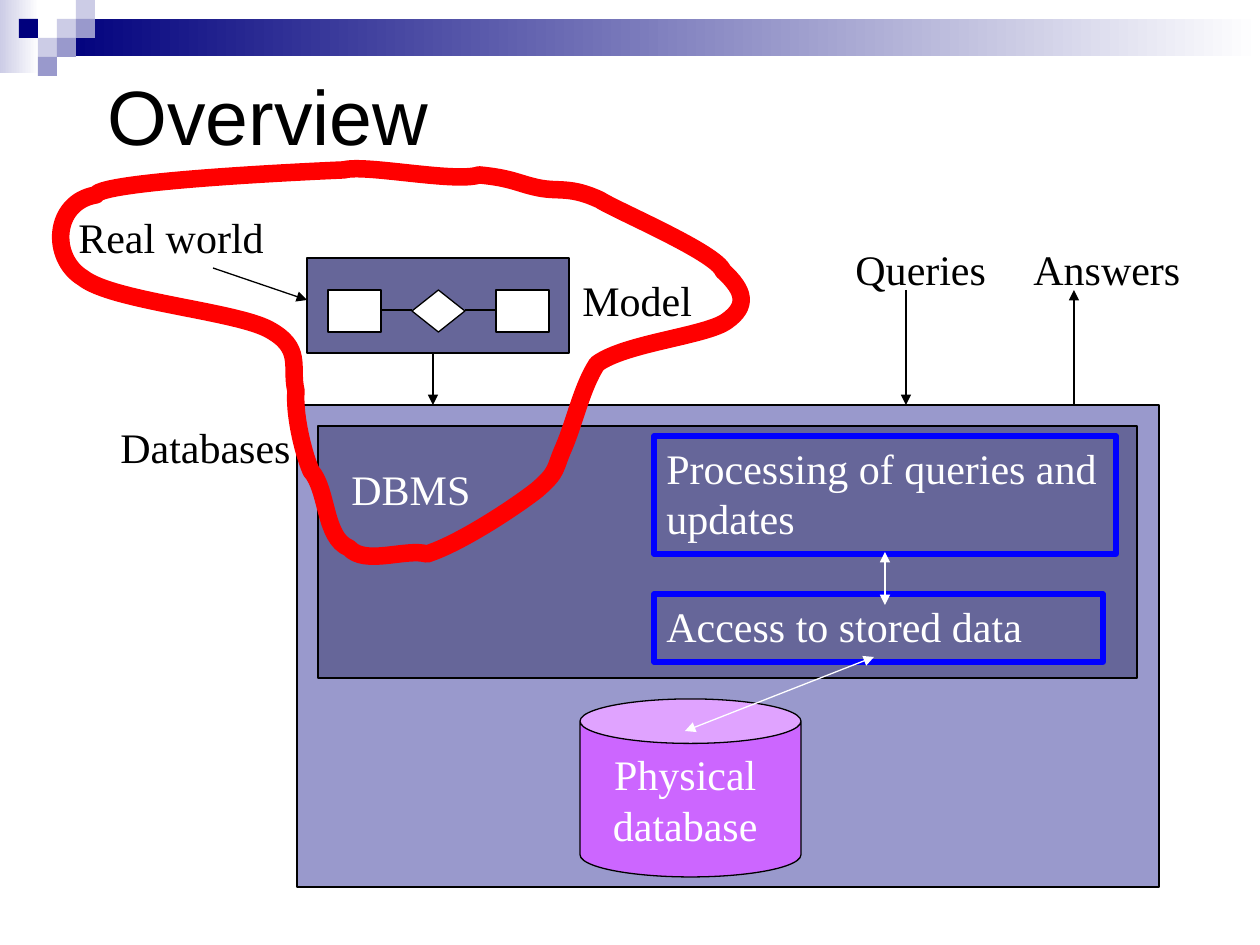
from lxml.etree import SubElement
from pptx import Presentation
from pptx.dml.color import RGBColor
from pptx.enum.shapes import MSO_CONNECTOR, MSO_SHAPE
from pptx.enum.text import MSO_ANCHOR, MSO_AUTO_SIZE, PP_ALIGN
from pptx.oxml.ns import qn
from pptx.util import Emu, Pt

SCALE = 914400 / 126
SQUARE = 19
RECT, CAN, DIAMOND = MSO_SHAPE.RECTANGLE, MSO_SHAPE.CAN, MSO_SHAPE.FLOWCHART_DECISION
SERIF = {"size": Pt(24), "name": "Times New Roman"}
SANS = {"size": Pt(44), "name": "Arial"}
TOP_LEFT = {"vertical_anchor": MSO_ANCHOR.TOP, "word_wrap": True}
MIDDLE = {"vertical_anchor": MSO_ANCHOR.MIDDLE, "word_wrap": True}
NO_WRAP = {
    "vertical_anchor": MSO_ANCHOR.TOP,
    "word_wrap": False,
    "auto_size": MSO_AUTO_SIZE.SHAPE_TO_FIT_TEXT,
}
CENTERED = {"vertical_anchor": MSO_ANCHOR.MIDDLE, "word_wrap": False}

BANDS = [((0, 0, 39, 73), "CCCCE6"), ((57, 19, 1203, 37), "00007D")]
SQUARES = [
    (3, 1, "CCCCE6"), (4, 0, "CCCCE6"), (4, 1, "9999CC"), (2, 2, "CCCCE6"),
    (1, 1, "00007D"), (3, 2, "9999CC"), (2, 3, "9999CC"),
]
BOXES = [
    (RECT, (297, 405, 862, 482), "9999CC", "000000", 0.75),
    (CAN, (580, 699, 221, 178), "CC66FF", "000000", 0.75),
    (RECT, (318, 426, 819, 252), "666699", "000000", 0.75),
    (RECT, (654, 436, 462, 118), None, "0000FF", 3),
    (RECT, (654, 594, 449, 68), None, "0000FF", 3),
    (RECT, (307, 258, 262, 95), "666699", "000000", 0.75),
    (RECT, (496, 290, 53, 42), "FFFFFF", "000000", 0.75),
    (RECT, (328, 290, 53, 42), "FFFFFF", "000000", 0.75),
    (DIAMOND, (412, 290, 53, 42), "FFFFFF", "000000", 0.75),
]
BOX_TEXTS = {
    1: (["Physical ", "database "], CENTERED, PP_ALIGN.CENTER),
    3: (["Processing of queries and", "updates"], TOP_LEFT, PP_ALIGN.LEFT),
    4: (["Access to stored data"], TOP_LEFT, PP_ALIGN.LEFT),
}
LABELS = [
    ("Overview", (95, 36, 1071, 158), SANS, "000000", MIDDLE),
    ("Real world", (66, 205, 214, 63), SERIF, "000000", NO_WRAP),
    ("Model", (570, 268, 138, 63), SERIF, "000000", NO_WRAP),
    ("Queries", (843, 237, 158, 63), SERIF, "000000", NO_WRAP),
    ("Answers", (1021, 237, 175, 63), SERIF, "000000", NO_WRAP),
    ("Databases", (108, 415, 199, 63), SERIF, "000000", NO_WRAP),
    ("DBMS", (339, 457, 147, 63), SERIF, "FFFFFF", NO_WRAP),
]
LINES = [
    ((885, 552, 885, 605), "FFFFFF", ("headEnd", "tailEnd")),
    ((874, 657, 685, 731), "FFFFFF", ("headEnd", "tailEnd")),
    ((381, 310, 412, 310), "000000", ()),
    ((465, 310, 496, 310), "000000", ()),
    ((906, 290, 906, 405), "000000", ("tailEnd",)),
    ((1074, 405, 1074, 290), "000000", ("tailEnd",)),
    ((213, 268, 307, 300), "000000", ("tailEnd",)),
    ((433, 353, 433, 405), "000000", ("tailEnd",)),
]
LASSO_START = (96, 195)
LASSO_CURVES = [
    ((53, 202), (50, 258), (83, 278)), ((112, 301), (233, 311), (268, 329)),
    ((304, 348), (290, 367), (296, 391)), ((294, 412), (302, 450), (311, 471)),
    ((328, 490), (324, 538), (349, 548)), ((365, 566), (406, 548), (427, 554)),
    ((459, 544), (514, 508), (537, 490)), ((559, 471), (554, 469), (564, 447)),
    ((575, 421), (582, 387), (597, 364)), ((625, 343), (707, 336), (727, 321)),
    ((748, 306), (745, 291), (723, 271)), ((717, 253), (615, 210), (600, 200)),
    ((570, 186), (559, 192), (539, 188)), ((519, 184), (512, 178), (479, 175)),
    ((455, 183), (365, 164), (344, 170)), ((344, 170), (100, 180), (96, 195)),
]


def px(*values):
    return [Emu(round(v * SCALE)) for v in values]


def rgb(value):
    return RGBColor.from_string(value)


def set_all(target, values):
    for name, value in values.items():
        setattr(target, name, value)


def paint(sp, fill=None, line=None, width=0.75):
    sp.shadow.inherit = False
    if fill:
        sp.fill.solid()
        sp.fill.fore_color.rgb = rgb(fill)
    else:
        sp.fill.background()
    if line:
        sp.line.color.rgb = rgb(line)
        sp.line.width = Pt(width)
    else:
        sp.line.fill.background()


def write(sp, texts, font, color, frame, align=PP_ALIGN.LEFT):
    tf = sp.text_frame
    set_all(tf, frame)
    for i, text in enumerate(texts):
        p = tf.add_paragraph() if i else tf.paragraphs[0]
        p.alignment = align
        r = p.add_run()
        r.text = text
        set_all(r.font, font)
        r.font.color.rgb = rgb(color)


def add_band(s, place, color):
    sp = s.shapes.add_shape(RECT, *px(*place))
    paint(sp)
    sp.fill.gradient()
    sp.fill.gradient_angle = 0
    for stop, value in zip(sp.fill.gradient_stops, (color, "FFFFFF")):
        stop.color.rgb = rgb(value)


def add_line(s, ends, color, arrows):
    cx = s.shapes.add_connector(MSO_CONNECTOR.STRAIGHT, *px(*ends))
    cx.line.color.rgb = rgb(color)
    cx.line.width = Pt(0.75)
    ln = cx.line._get_or_add_ln()
    for arrow in arrows:
        SubElement(ln, qn("a:" + arrow), type="triangle")
    SubElement(cx._element.spPr, qn("a:effectLst"))


def add_lasso(s):
    fb = s.shapes.build_freeform(*LASSO_START, scale=SCALE)
    fb.add_line_segments([pt for curve in LASSO_CURVES for pt in curve], close=True)
    sp = fb.convert_to_shape()
    paint(sp, None, "FF0000", 10)
    segments = list(sp._element.iter(qn("a:lnTo")))
    for i in range(0, len(LASSO_CURVES) * 3, 3):
        first, *others = segments[i:i + 3]
        first.tag = qn("a:cubicBezTo")
        for other in others:
            first.append(other[0])
            other.getparent().remove(other)


def main():
    prs = Presentation()
    prs.slide_width, prs.slide_height = px(1260, 945)
    s = prs.slides.add_slide(prs.slide_layouts[6])
    for place, color in BANDS:
        add_band(s, place, color)
    for col, row, color in SQUARES:
        place = px(col * SQUARE, row * SQUARE, SQUARE, SQUARE)
        paint(s.shapes.add_shape(RECT, *place), color)
    for i, (kind, place, *style) in enumerate(BOXES):
        sp = s.shapes.add_shape(kind, *px(*place))
        paint(sp, *style)
        if i in BOX_TEXTS:
            texts, frame, align = BOX_TEXTS[i]
            write(sp, texts, SERIF, "FFFFFF", frame, align)
    for text, place, font, color, frame in LABELS:
        write(s.shapes.add_textbox(*px(*place)), [text], font, color, frame)
    for line in LINES:
        add_line(s, *line)
    add_lasso(s)
    prs.save("out.pptx")


if __name__ == "__main__":
    main()
